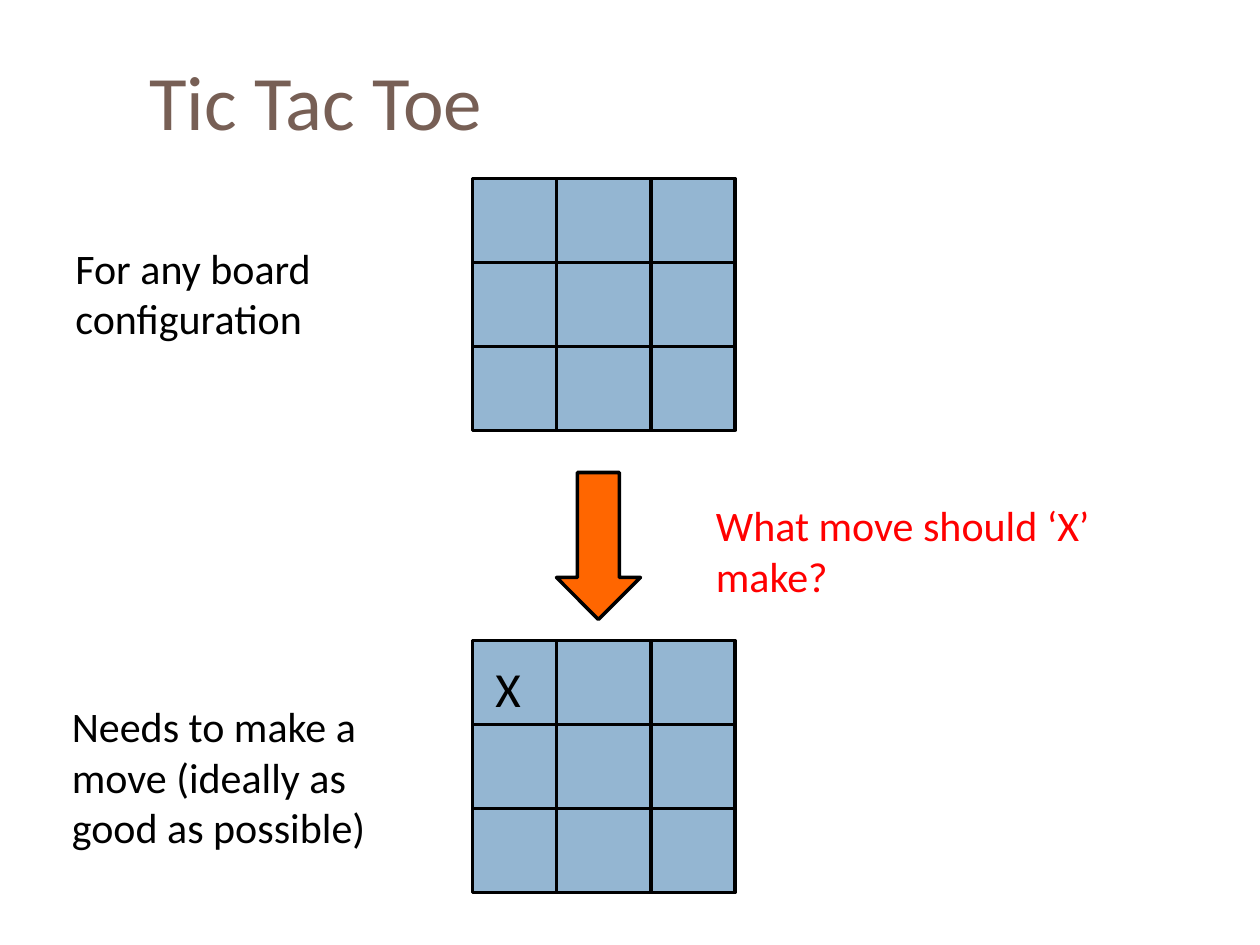
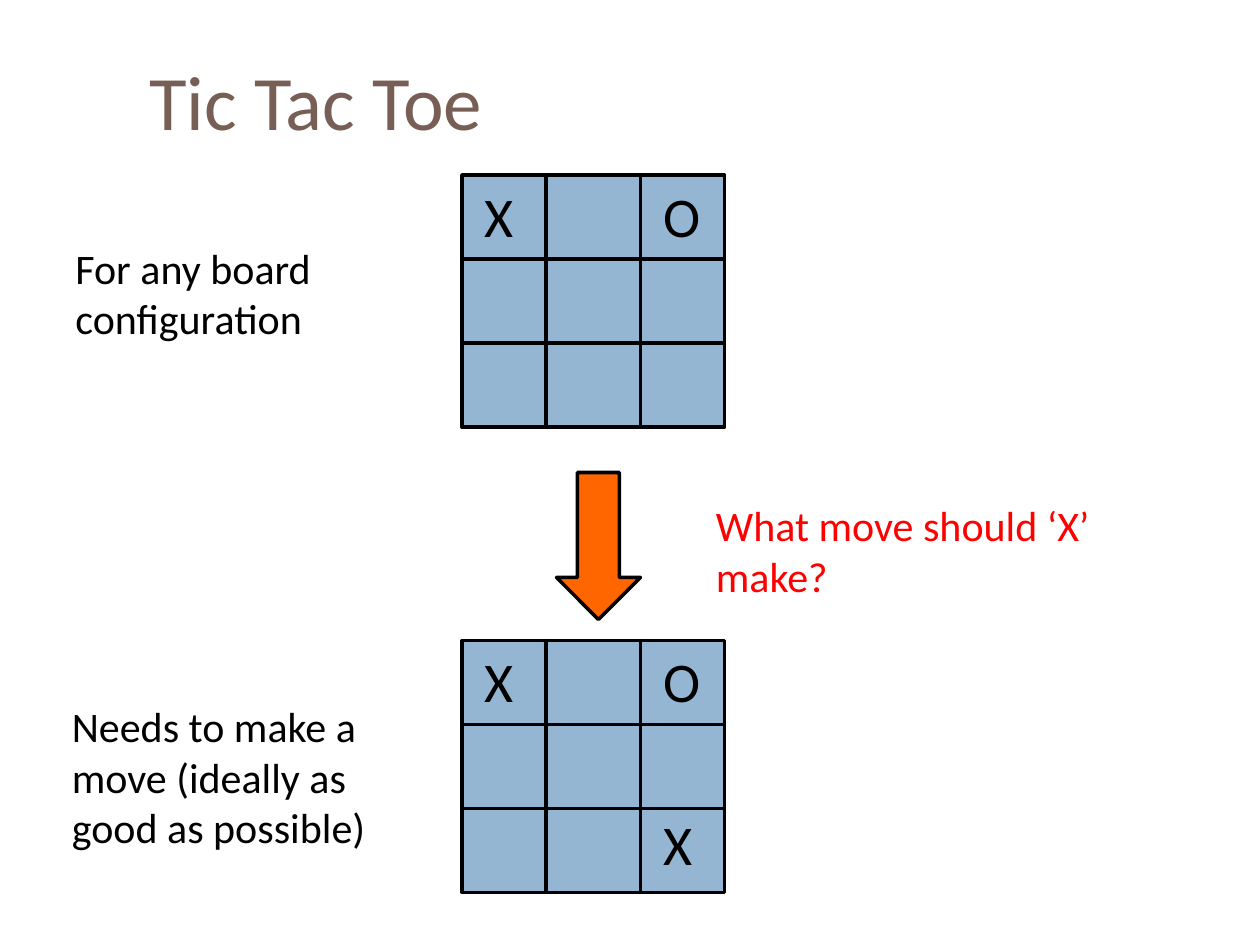
from pptx import Presentation
from pptx.dml.color import RGBColor
from pptx.enum.shapes import MSO_CONNECTOR, MSO_SHAPE
from pptx.enum.text import MSO_ANCHOR, MSO_AUTO_SIZE, PP_ALIGN
from pptx.oxml.ns import qn
from pptx.util import Pt
from lxml import etree

RECT = MSO_SHAPE.RECTANGLE
DOWN = MSO_SHAPE.DOWN_ARROW
LINE = MSO_CONNECTOR.STRAIGHT
MID = MSO_ANCHOR.MIDDLE
LEFT = PP_ALIGN.LEFT
GROW = MSO_AUTO_SIZE.SHAPE_TO_FIT_TEXT

COLORS = {
    "title": "775F55",
    "board": "94B6D2",
    "arrow": "FF6600",
    "ask": "FF0000",
    "ink": "000000",
}
WIDE, HIGH = 150, 144
COLS = (48, 102)
ROWS = (48, 96)


class Deck:
    font = "Calibri"
    stroke = 2

    def __init__(self):
        self.prs = Presentation()
        self.prs.slide_width, self.prs.slide_height = Pt(720), Pt(540)

    def color(self, name):
        return RGBColor.from_string(COLORS[name])

    def style(self, frame, size, color):
        for para in frame.paragraphs:
            para.alignment = LEFT
            for run in para.runs:
                run.font.name = self.font
                run.font.size = Pt(size)
                run.font.color.rgb = self.color(color)

    def start(self, title):
        self.slide = self.prs.slides.add_slide(self.prs.slide_layouts[5])
        head = self.slide.shapes.title
        head.left, head.top, head.width, head.height = Pt(78), Pt(18), Pt(642), Pt(78)
        head.text_frame.text = title
        head.text_frame.vertical_anchor = MID
        self.style(head.text_frame, 44, "title")

    def text(self, words, x, y, w, h, size=24, color="ink"):
        box = self.slide.shapes.add_textbox(Pt(x), Pt(y), Pt(w), Pt(h))
        frame = box.text_frame
        frame.word_wrap = True
        frame.auto_size = GROW
        frame.text = words
        self.style(frame, size, color)

    def edge(self, item):
        item.line.color.rgb = self.color("ink")
        item.line.width = Pt(self.stroke)

    def shape(self, kind, x, y, w, h, fill, home=None):
        item = (home or self.slide).shapes.add_shape(kind, Pt(x), Pt(y), Pt(w), Pt(h))
        item.shadow.inherit = False
        item.fill.solid()
        item.fill.fore_color.rgb = self.color(fill)
        self.edge(item)

    def line(self, home, x1, y1, x2, y2):
        item = home.shapes.add_connector(LINE, Pt(x1), Pt(y1), Pt(x2), Pt(y2))
        self.edge(item)
        etree.SubElement(item._element.spPr, qn("a:effectLst"))

    def board(self, x, y, marks=(), size=32):
        group = self.slide.shapes.add_group_shape()
        self.shape(RECT, x, y, WIDE, HIGH, "board", group)
        for dx in COLS:
            self.line(group, x + dx, y, x + dx, y + HIGH)
        for dy in ROWS:
            self.line(group, x + WIDE, y + dy, x, y + dy)
        for mark, dx, dy in marks:
            self.text(mark, x + dx, y + dy, 48, 46, size)

    def scene(self):
        self.start("Tic Tac Toe")
        self.shape(DOWN, 318, 270, 48, 84, "arrow")
        self.text("For any board configuration", 36, 135, 198, 65)
        self.text("Needs to make a move (ideally as good as possible)", 34, 397, 198, 94)
        self.text("What move should ‘X’ make?", 402, 282, 291.6, 36, color="ask")


def main():
    deck = Deck()
    deck.scene()
    deck.board(270, 102)
    deck.board(270, 366, [("X", 6, 7)], 28)

    deck.scene()
    given = [("X", 6, 0), ("O", 108, 0)]
    deck.board(264, 100, given)
    deck.board(264, 366, given + [("X", 108, 93)])
    deck.prs.save("out.pptx")


if __name__ == "__main__":
    main()
